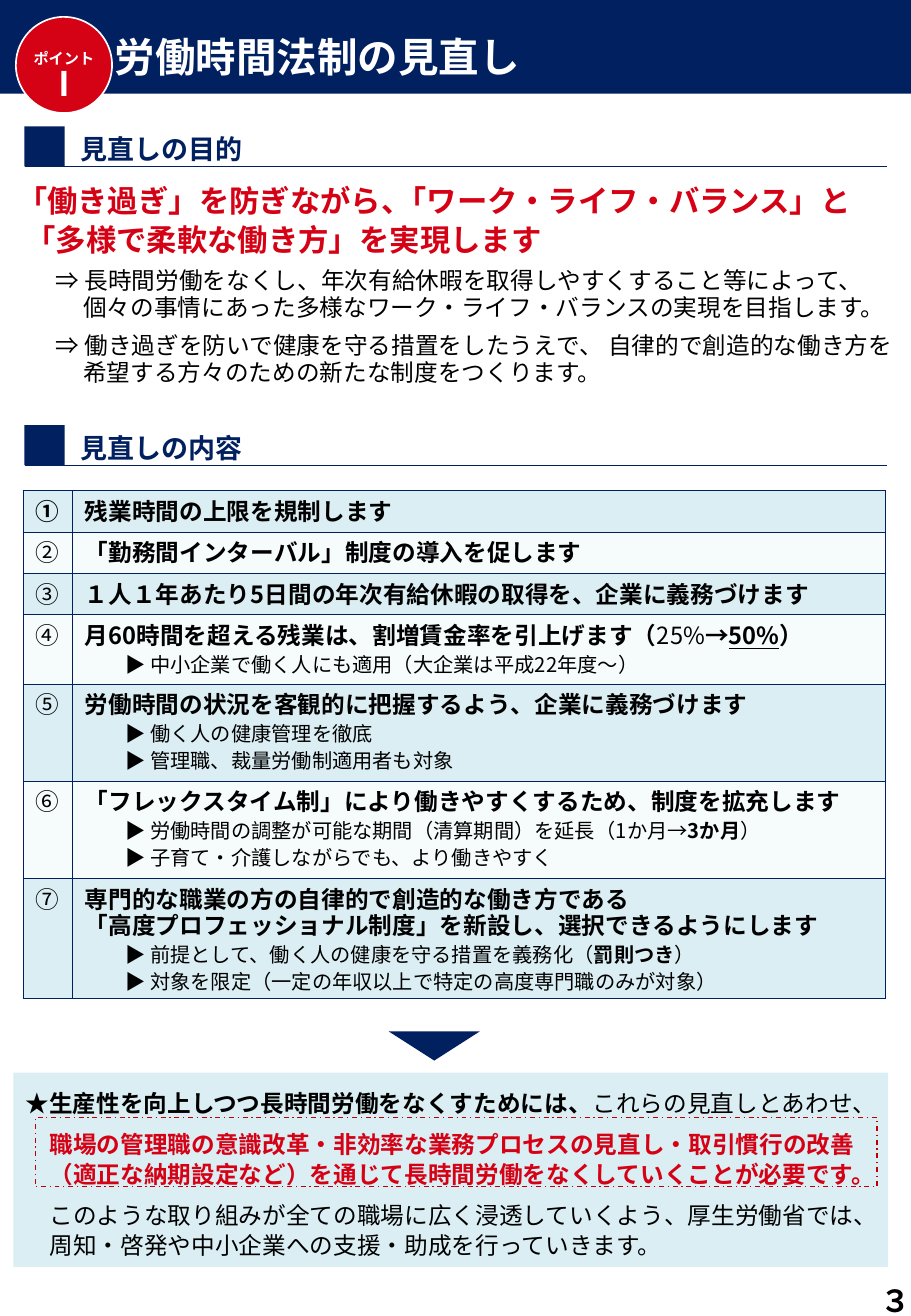
import lxml.etree
import pptx
import pptx.dml.color
import pptx.enum.dml
import pptx.enum.shapes
import pptx.enum.text
import pptx.oxml.ns
import pptx.util

Pt = pptx.util.Pt
RGBColor = pptx.dml.color.RGBColor
SHAPE = pptx.enum.shapes.MSO_SHAPE
ALIGN = pptx.enum.text.PP_ALIGN
ANCHOR = pptx.enum.text.MSO_ANCHOR
qn = pptx.oxml.ns.qn

FONT = "Noto Sans CJK JP"
NAVY = RGBColor(0x00, 0x20, 0x60)
RED = RGBColor(0xD5, 0x01, 0x15)
DARK_RED = RGBColor(0xC0, 0x00, 0x00)
PALE_BLUE = RGBColor(0xDB, 0xEE, 0xF4)
PALEST_BLUE = RGBColor(0xF6, 0xFB, 0xFC)
WHITE = RGBColor(0xFF, 0xFF, 0xFF)
BLACK = RGBColor(0x00, 0x00, 0x00)

BOLD = {"bold": True}
PLAIN = {"bold": False}

REFORMS = [
    (24.5, ["残業時間の上限を規制します"], []),
    (24.5, ["「勤務間インターバル」制度の導入を促します"], []),
    (24.5, ["１人１年あたり5日間の年次有給休暇の取得を、企業に義務づけます"], []),
    (41, [[("月60時間を超える残業は、割増賃金率を引上げます（", {}), ("25%", PLAIN),
           ("→", {}), ("50%", {"underline": True}), ("）", {})]],
     ["中小企業で働く人にも適用（大企業は平成22年度～）"]),
    (57.6, ["労働時間の状況を客観的に把握するよう、企業に義務づけます"],
     ["働く人の健康管理を徹底", "管理職、裁量労働制適用者も対象"]),
    (57.6, ["「フレックスタイム制」により働きやすくするため、制度を拡充します"],
     [[("労働時間の調整が可能な期間（清算期間）を延長（1か月→", {}),
       ("3か月", BOLD), ("）", {})],
      "子育て・介護しながらでも、より働きやすく"]),
    (71.2, ["専門的な職業の方の自律的で創造的な働き方である",
            "「高度プロフェッショナル制度」を新設し、選択できるようにします"],
     [[("前提として、働く人の健康を守る措置を義務化（", {}),
       ("罰則つき", BOLD), ("）", {})],
      "対象を限定（一定の年収以上で特定の高度専門職のみが対象）"]),
]


def add_paragraph(tf, runs, size, color=BLACK, bold=False, spacing=None, before=0,
                  left=0, indent=0, align=ALIGN.LEFT, bullet=None):
    p = tf.paragraphs[0]
    if p.runs:
        p = tf.add_paragraph()
    p.alignment = align
    p.space_before = Pt(before)
    if spacing:
        p.line_spacing = Pt(spacing)
    p.font.name, p.font.size, p.font.bold = FONT, Pt(size), bold
    p.font.color.rgb = color
    pPr = p._p.pPr
    pPr.set("marL", str(Pt(left)))
    pPr.set("indent", str(Pt(indent)))
    defaults = pPr.find(qn("a:defRPr"))
    lxml.etree.SubElement(defaults, qn("a:ea"), typeface=FONT)
    if bullet:
        defaults.addprevious(defaults.makeelement(qn("a:buFont"), {"typeface": FONT}))
        defaults.addprevious(defaults.makeelement(qn("a:buChar"), {"char": bullet}))
    for text, style in [(runs, {})] if isinstance(runs, str) else runs:
        r = p.add_run()
        r.text = text
        for name, value in style.items():
            setattr(r.font, name, value)


def set_frame(tf, anchor=ANCHOR.TOP, insets=(0, 0, 0, 0)):
    tf.word_wrap = True
    tf.vertical_anchor = anchor
    tf.margin_left, tf.margin_top, tf.margin_right, tf.margin_bottom = map(Pt, insets)
    return tf


def add_text(shapes, box, **frame):
    return set_frame(shapes.add_textbox(*map(Pt, box)).text_frame, **frame)


def add_shape(shapes, kind, box, fill=None, line=None, width=1):
    sp = shapes.add_shape(kind, *map(Pt, box))
    sp.shadow.inherit = False
    if fill is None:
        sp.fill.background()
    else:
        sp.fill.solid()
        sp.fill.fore_color.rgb = fill
    if line is None:
        sp.line.fill.background()
    else:
        sp.line.color.rgb = line
        sp.line.width = Pt(width)
    return sp


def add_heading(s, top, text):
    shapes = s.shapes.add_group_shape().shapes
    tf = add_text(shapes, (48, top - 2.2, 210, 31), anchor=ANCHOR.MIDDLE)
    add_paragraph(tf, text, 16, NAVY, bold=True)
    add_shape(shapes, SHAPE.RECTANGLE, (14.5, top, 23.8, 23.8), NAVY)
    rule = shapes.add_connector(pptx.enum.shapes.MSO_CONNECTOR.STRAIGHT,
                                Pt(15), Pt(top + 23.7), Pt(525.5), Pt(top + 23.7))
    rule.line.color.rgb = NAVY
    rule.line.width = Pt(0.75)
    lxml.etree.SubElement(rule._element.spPr, qn("a:effectLst"))


def add_header(s):
    sp = add_shape(s.shapes, SHAPE.RECTANGLE, (0, 0, 540, 55.5), NAVY)
    tf = set_frame(sp.text_frame, insets=(68, 18.7, 7, 0))
    add_paragraph(tf, "労働時間法制の見直し", 24, WHITE, bold=True)
    sp = add_shape(s.shapes, SHAPE.ROUNDED_RECTANGLE, (9.4, 10, 57, 57), RED, WHITE)
    sp.adjustments[0] = 0.5
    tf = set_frame(sp.text_frame, ANCHOR.MIDDLE, (0, 3, 0, 0))
    for text, size in (("ポイント", 9), ("Ⅰ", 20)):
        add_paragraph(tf, text, size, WHITE, bold=True, spacing=21, align=ALIGN.CENTER)


def add_purpose(s):
    tf = add_text(s.shapes, (15, 106.7, 525, 142))
    for text, left in (("｢働き過ぎ」を防ぎながら、｢ワーク・ライフ・バランス」と", 4),
                       ("「多様で柔軟な働き方」を実現します", 0)):
        add_paragraph(tf, text, 18, RED, bold=True, spacing=23, left=left)
    for first, second in (
            ("⇒ 長時間労働をなくし、年次有給休暇を取得しやすくすること等によって、",
             "個々の事情にあった多様なワーク・ライフ・バランスの実現を目指します。"),
            ("⇒ 働き過ぎを防いで健康を守る措置をしたうえで、 自律的で創造的な働き方を",
             "希望する方々のための新たな制度をつくります。")):
        add_paragraph(tf, first, 14, spacing=16, before=6, left=18)
        add_paragraph(tf, second, 14, spacing=16, left=34.3)


def add_cell_borders(cell):
    tcPr = cell._tc.get_or_add_tcPr()
    for i, side in enumerate(("lnL", "lnR", "lnT", "lnB")):
        ln = tcPr.makeelement(qn("a:" + side), {"w": str(Pt(0.5))})
        fill = lxml.etree.SubElement(ln, qn("a:solidFill"))
        lxml.etree.SubElement(fill, qn("a:srgbClr"), val=str(NAVY))
        tcPr.insert(i, ln)


def add_reforms(s):
    height = sum(row[0] for row in REFORMS)
    table = s.shapes.add_table(len(REFORMS), 2, Pt(13.7), Pt(290.9),
                               Pt(511.2), Pt(height)).table
    table.first_row = table.horz_banding = False
    table.columns[0].width, table.columns[1].width = Pt(29.5), Pt(481.7)
    for i, (height, titles, details) in enumerate(REFORMS):
        table.rows[i].height = Pt(height)
        for cell in table.rows[i].cells:
            set_frame(cell.text_frame)
            cell.margin_left = cell.margin_right = Pt(7.2)
            cell.margin_top, cell.margin_bottom = Pt(5.75), Pt(1.4)
            cell.vertical_anchor = ANCHOR.TOP
            cell.fill.solid()
            cell.fill.fore_color.rgb = PALEST_BLUE if i % 2 else PALE_BLUE
            add_cell_borders(cell)
        add_paragraph(table.cell(i, 0).text_frame, "①②③④⑤➅⑦"[i], 14,
                      bold=i == 0, spacing=16)
        tf = table.cell(i, 1).text_frame
        for title in titles:
            add_paragraph(tf, title, 14, bold=True, spacing=16)
        for detail in details:
            add_paragraph(tf, detail, 12, spacing=16, left=38.7, indent=-14.7, bullet="▶")


def add_summary(s):
    arrow = add_shape(s.shapes, SHAPE.ISOSCELES_TRIANGLE, (230.4, 611.3, 54, 17.3), NAVY)
    arrow.rotation = 180
    sp = add_shape(s.shapes, SHAPE.RECTANGLE, (8, 635.8, 518.5, 115.2), PALE_BLUE)
    tf = set_frame(sp.text_frame, insets=(7.2, 8.6, 5, 3.6))
    add_paragraph(tf, [("★生産性を向上しつつ長時間労働をなくすためには、", BOLD),
                       ("これらの見直しとあわせ、", {})],
                  14, spacing=18, left=14.4, indent=-14.4)
    add_paragraph(tf, "職場の管理職の意識改革・非効率な業務プロセスの見直し・取引慣行の改善"
                  "（適正な納期設定など）を通じて長時間労働をなくしていくことが必要です。",
                  14, RED, bold=True, spacing=18, before=6, left=14.4)
    add_paragraph(tf, "このような取り組みが全ての職場に広く浸透していくよう、厚生労働省では、"
                  "周知・啓発や中小企業への支援・助成を行っていきます。",
                  14, spacing=18, before=6, left=14.4)
    frame = add_shape(s.shapes, SHAPE.RECTANGLE, (20.9, 662.4, 499, 41),
                      line=DARK_RED, width=0.75)
    frame.line.dash_style = pptx.enum.dml.MSO_LINE.DASH_DOT


def main():
    prs = pptx.Presentation()
    prs.slide_width, prs.slide_height = Pt(540), Pt(780)
    s = prs.slides.add_slide(prs.slide_layouts[6])
    add_header(s)
    add_heading(s, 74.9, "見直しの目的")
    add_purpose(s)
    add_heading(s, 252, "見直しの内容")
    add_reforms(s)
    add_summary(s)
    tf = add_text(s.shapes, (480, 762, 60, 18), anchor=ANCHOR.MIDDLE)
    add_paragraph(tf, "３", 18, bold=True, align=ALIGN.RIGHT)
    prs.save("out.pptx")


if __name__ == "__main__":
    main()
